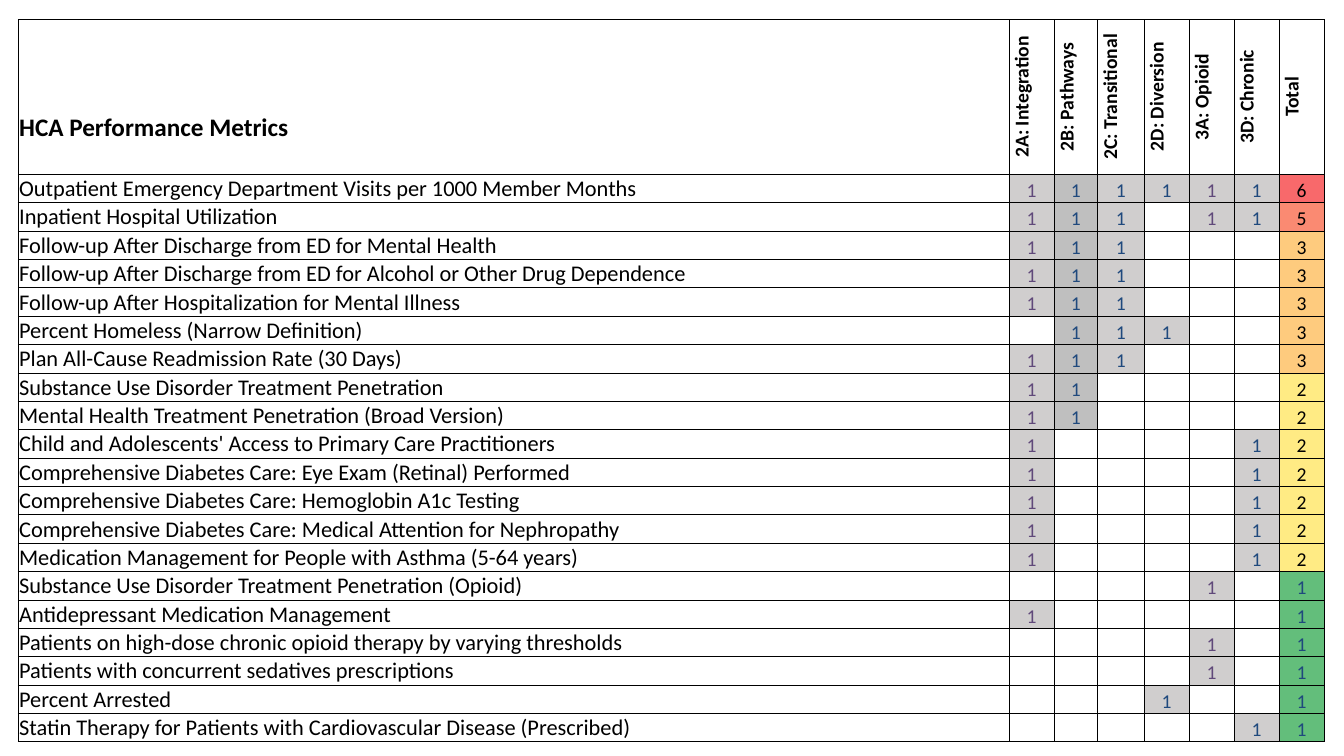
from dataclasses import dataclass

from lxml.etree import SubElement
from pptx import Presentation
from pptx.dml.color import RGBColor
from pptx.enum.text import MSO_ANCHOR as Anchor, PP_ALIGN as Align
from pptx.oxml.ns import qn
from pptx.table import _Cell as Cell
from pptx.util import Pt


@dataclass(frozen=True)
class Theme:
    font: str = "Calibri"
    heading: int = 18
    label: int = 16
    value: int = 14
    border: float = 0.5
    black: str = "000000"
    purple: str = "60497A"
    navy: str = "1F497D"
    mark: str = "D0CECE"
    pathways_mark: str = "BFBFBF"


@dataclass(frozen=True)
class Project:
    name: str
    width: float
    ink: str
    fill: str


@dataclass(frozen=True)
class Metric:
    name: str
    marks: str  # one digit per project, 1 where the metric applies


THEME = Theme()

PROJECTS = [
    Project("2A: Integration", 32.2, THEME.purple, THEME.mark),
    Project("2B: Pathways", 31, THEME.navy, THEME.pathways_mark),
    Project("2C: Transitional", 33.2, THEME.navy, THEME.mark),
    Project("2D: Diversion", 32.2, THEME.navy, THEME.mark),
    Project("3A: Opioid", 32.2, THEME.purple, THEME.mark),
    Project("3D: Chronic", 32.2, THEME.navy, THEME.mark),
]

METRICS = [
    Metric("Outpatient Emergency Department Visits per 1000 Member Months", "111111"),
    Metric("Inpatient Hospital Utilization", "111011"),
    Metric("Follow-up After Discharge from ED for Mental Health", "111000"),
    Metric("Follow-up After Discharge from ED for Alcohol or Other Drug Dependence", "111000"),
    Metric("Follow-up After Hospitalization for Mental Illness", "111000"),
    Metric("Percent Homeless (Narrow Definition)", "011100"),
    Metric("Plan All-Cause Readmission Rate (30 Days)", "111000"),
    Metric("Substance Use Disorder Treatment Penetration", "110000"),
    Metric("Mental Health Treatment Penetration (Broad Version)", "110000"),
    Metric("Child and Adolescents' Access to Primary Care Practitioners", "100001"),
    Metric("Comprehensive Diabetes Care: Eye Exam (Retinal) Performed", "100001"),
    Metric("Comprehensive Diabetes Care: Hemoglobin A1c Testing", "100001"),
    Metric("Comprehensive Diabetes Care: Medical Attention for Nephropathy", "100001"),
    Metric("Medication Management for People with Asthma (5-64 years)", "100001"),
    Metric("Substance Use Disorder Treatment Penetration (Opioid)", "000010"),
    Metric("Antidepressant Medication Management", "100000"),
    Metric("Patients on high-dose chronic opioid therapy by varying thresholds", "000010"),
    Metric("Patients with concurrent sedatives prescriptions", "000010"),
    Metric("Percent Arrested", "000100"),
    Metric("Statin Therapy for Patients with Cardiovascular Disease (Prescribed)", "000001"),
]

TOTAL_FILLS = {6: "F8696B", 5: "FA8A72", 3: "FECB7E", 2: "FFEB84", 1: "63BE7B"}

LEFT, TOP = 13, 13.9
LABEL_WIDTH, TOTAL_WIDTH = 707.8, 32.2
HEADER_HEIGHT, ROW_HEIGHT = 110.6, 20.2
INSET = 0.7


def add_borders(cell: Cell) -> None:
    tc_pr = cell._tc.get_or_add_tcPr()
    for side in ("a:lnL", "a:lnR", "a:lnT", "a:lnB"):
        line = SubElement(tc_pr, qn(side), w=str(Pt(THEME.border)))
        fill = SubElement(line, qn("a:solidFill"))
        SubElement(fill, qn("a:srgbClr"), val=THEME.black)


def write_cell(cell: Cell, text: str, *, size: int = THEME.value, color: str = THEME.black,
               bold: bool = False, fill: str = "", align: Align = Align.CENTER,
               anchor: Anchor = Anchor.BOTTOM, bottom: float = 0,
               vertical: bool = False) -> None:
    add_borders(cell)
    if fill:
        cell.fill.solid()
        cell.fill.fore_color.rgb = RGBColor.from_string(fill)
    else:
        cell.fill.background()
    cell.margin_left = cell.margin_right = cell.margin_top = Pt(INSET)
    cell.margin_bottom = Pt(bottom)
    cell.vertical_anchor = anchor
    if vertical:
        cell._tc.get_or_add_tcPr().set("vert", "vert270")

    p = cell.text_frame.paragraphs[0]
    p.alignment = align
    if not text:
        # Keep an empty cell from stretching its row
        SubElement(p._p, qn("a:endParaRPr"), sz=str(size * 100))
        return
    r = p.add_run()
    r.text = text
    r.font.name = THEME.font
    r.font.size = Pt(size)
    r.font.bold = bold
    r.font.color.rgb = RGBColor.from_string(color)


def main() -> None:
    prs = Presentation()
    prs.slide_width, prs.slide_height = Pt(960), Pt(540)
    s = prs.slides.add_slide(prs.slide_layouts[6])

    # Table grid
    widths = [LABEL_WIDTH, *(project.width for project in PROJECTS), TOTAL_WIDTH]
    heights = [HEADER_HEIGHT] + [ROW_HEIGHT] * len(METRICS)
    table = s.shapes.add_table(len(heights), len(widths), Pt(LEFT), Pt(TOP),
                               Pt(sum(widths)), Pt(sum(heights))).table
    table.first_row = table.horz_banding = False
    for column, width in zip(table.columns, widths):
        column.width = Pt(width)
    for row, height in zip(table.rows, heights):
        row.height = Pt(height)

    # Header row
    write_cell(table.cell(0, 0), "HCA Performance Metrics", size=THEME.heading,
               bold=True, align=Align.LEFT, bottom=22)
    names = [project.name for project in PROJECTS] + ["Total"]
    for col, name in enumerate(names, 1):
        write_cell(table.cell(0, col), name, bold=True, vertical=True)

    # Metric rows: label, project marks, total
    for row, metric in enumerate(METRICS, 1):
        write_cell(table.cell(row, 0), metric.name, size=THEME.label,
                   align=Align.LEFT, anchor=Anchor.MIDDLE)
        for col, (project, mark) in enumerate(zip(PROJECTS, metric.marks), 1):
            marked = mark == "1"
            write_cell(table.cell(row, col), mark if marked else "", color=project.ink,
                       fill=project.fill if marked else "")
        total = metric.marks.count("1")
        write_cell(table.cell(row, len(names)), str(total), fill=TOTAL_FILLS[total],
                   color=THEME.navy if total == 1 else THEME.black)

    prs.save("out.pptx")


if __name__ == "__main__":
    main()
